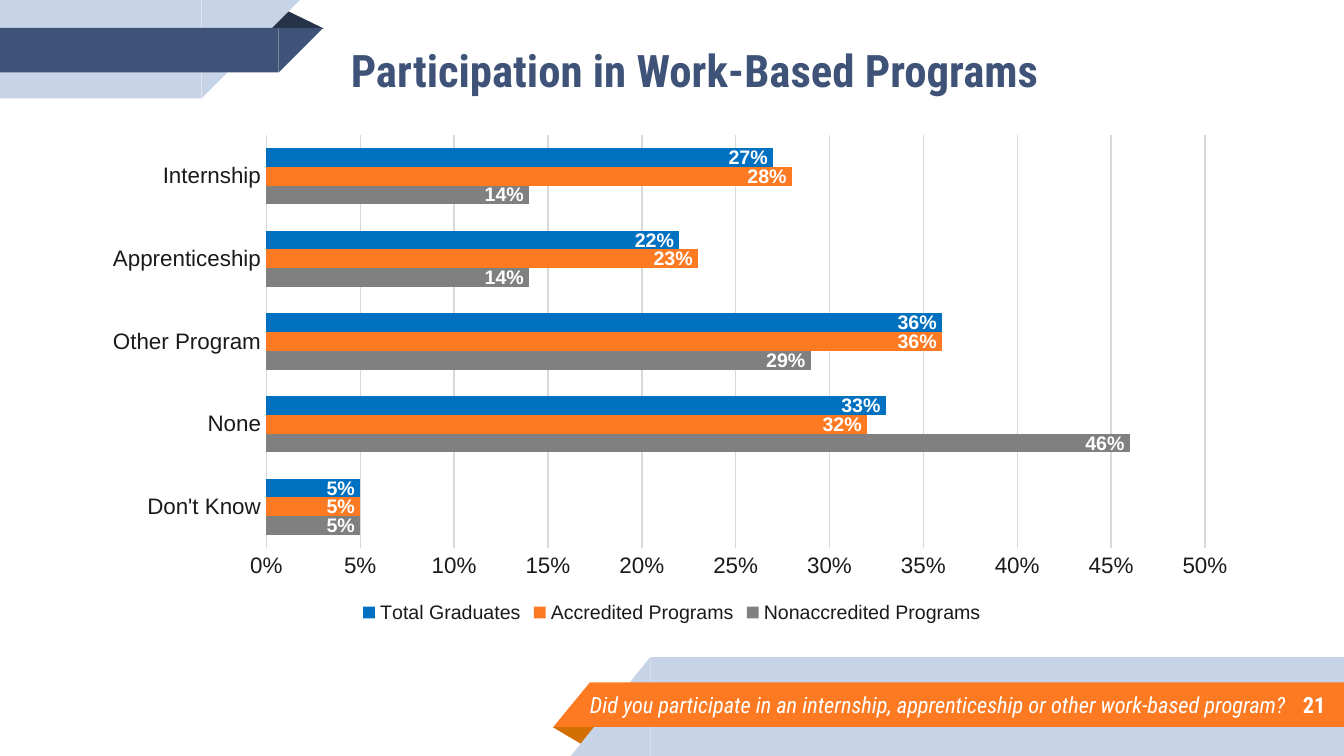
from dataclasses import dataclass

from lxml import etree
from pptx import Presentation
from pptx.chart.data import CategoryChartData
from pptx.dml.color import RGBColor
from pptx.enum.chart import XL_CHART_TYPE, XL_LABEL_POSITION, XL_LEGEND_POSITION, XL_TICK_MARK
from pptx.enum.shapes import MSO_SHAPE
from pptx.enum.text import MSO_ANCHOR, PP_ALIGN
from pptx.oxml.ns import qn
from pptx.util import Cm, Pt

BAR_CLUSTERED = XL_CHART_TYPE.BAR_CLUSTERED
INSIDE_END = XL_LABEL_POSITION.INSIDE_END
LEGEND_BOTTOM = XL_LEGEND_POSITION.BOTTOM
NO_TICK = XL_TICK_MARK.NONE
RECT = MSO_SHAPE.RECTANGLE
TRIANGLE = MSO_SHAPE.ISOSCELES_TRIANGLE
RIGHT_TRIANGLE = MSO_SHAPE.RIGHT_TRIANGLE
MIDDLE = MSO_ANCHOR.MIDDLE
LEFT, RIGHT = PP_ALIGN.LEFT, PP_ALIGN.RIGHT

NAVY = RGBColor(0x3F, 0x53, 0x78)
DARK_NAVY = RGBColor(0x26, 0x32, 0x48)
PALE_BLUE = RGBColor(0xC7, 0xD3, 0xE6)
ORANGE = RGBColor(0xFD, 0x7A, 0x22)
DARK_ORANGE = RGBColor(0xD2, 0x6F, 0x00)
BLUE = RGBColor(0x00, 0x70, 0xC0)
GREY = RGBColor(0x80, 0x80, 0x80)
GRID = RGBColor(0xD9, 0xD9, 0xD9)
INK = RGBColor(0x1A, 0x1A, 0x1A)
BLACK = RGBColor(0, 0, 0)
WHITE = RGBColor(0xFF, 0xFF, 0xFF)

HEAD_FONT, CHART_FONT = "Roboto Condensed", "Arial"
SLIDE_W, SLIDE_H = 25.4, 14.29


@dataclass
class Fold:
    x: float
    y: float
    w: float
    h: float
    color: RGBColor
    rotation: int = 0


@dataclass
class Ribbon:
    """Band running in from a slide edge, with a slanted inner end."""
    y: float
    h: float
    length: float
    slant: float
    color: RGBColor
    from_right: bool = False


@dataclass
class Label:
    text: str
    x: float
    y: float
    w: float
    h: float
    size: float
    color: RGBColor
    bold: bool = False
    italic: bool = False
    align: PP_ALIGN = LEFT


@dataclass
class Series:
    name: str
    values: tuple[float, ...]
    color: RGBColor


DECOR = [
    Fold(10.44, 13.74, 0.89, 0.36, DARK_ORANGE, 180),
    Ribbon(12.42, 1.87, 13.11, 1.5, PALE_BLUE, True),
    Ribbon(12.9, 0.84, 14.25, 0.69, ORANGE, True),
    Fold(5.03, 0.18, 1.09, 0.36, DARK_NAVY),
    Ribbon(0, 1.86, 3.81, 1.86, PALE_BLUE),
    Ribbon(0.53, 0.84, 5.27, 0.84, NAVY),
]
LABELS = [
    Label("Did you participate in an internship, apprenticeship or other work-based program?",
          10.9, 12.88, 14.5, 0.89, 12, WHITE, italic=True),
    Label("21", 21.16, 12.88, 4.14, 0.89, 12, WHITE, bold=True, align=RIGHT),
    Label("Participation in Work-Based Programs", 6.38, 0.25, 16.46, 2.13, 24, NAVY, bold=True),
]
CATEGORIES = ["Don't Know", "None", "Other Program", "Apprenticeship", "Internship"]
SERIES = [
    Series("Nonaccredited Programs", (0.05, 0.46, 0.29, 0.14, 0.14), GREY),
    Series("Accredited Programs", (0.05, 0.32, 0.36, 0.23, 0.28), ORANGE),
    Series("Total Graduates", (0.05, 0.33, 0.36, 0.22, 0.27), BLUE),
]
PLOT_LAYOUT = {"x": 0.15, "y": 0.02, "w": 0.81, "h": 0.82}


def add_solid(s, kind: MSO_SHAPE, x: float, y: float, w: float, h: float, color: RGBColor):
    sp = s.shapes.add_shape(kind, Cm(x), Cm(y), Cm(w), Cm(h))
    sp.shadow.inherit = False
    sp.fill.solid()
    sp.fill.fore_color.rgb = color
    sp.line.fill.background()
    return sp


def draw_fold(s, fold: Fold) -> None:
    sp = add_solid(s, TRIANGLE, fold.x, fold.y, fold.w, fold.h, fold.color)
    sp.adjustments[0] = 0.32
    sp.rotation = fold.rotation


def draw_ribbon(s, b: Ribbon) -> None:
    x = SLIDE_W - b.length if b.from_right else 0
    end_x = x - b.slant if b.from_right else b.length
    add_solid(s, RECT, x, b.y, b.length, b.h, b.color)
    end = add_solid(s, RIGHT_TRIANGLE, end_x, b.y, b.slant, b.h, b.color)
    end.element.spPr.find(qn("a:xfrm")).set("flipH" if b.from_right else "flipV", "1")


def style_font(font, name: str, size: float, color: RGBColor, bold=False, italic=False) -> None:
    font.name, font.size = name, Pt(size)
    font.bold, font.italic = bold, italic
    font.color.rgb = color


def draw_label(s, label: Label) -> None:
    sp = s.shapes.add_textbox(Cm(label.x), Cm(label.y), Cm(label.w), Cm(label.h))
    tf = sp.text_frame
    tf.word_wrap = True
    tf.vertical_anchor = MIDDLE
    tf.margin_left = tf.margin_right = tf.margin_top = tf.margin_bottom = Cm(0.25)
    p = tf.paragraphs[0]
    p.alignment = label.align
    r = p.add_run()
    r.text = label.text
    style_font(r.font, HEAD_FONT, label.size, label.color, label.bold, label.italic)


def fix_plot_area(chart) -> None:
    area = chart.element.find(".//" + qn("c:plotArea"))
    for old in area.findall(qn("c:layout")):
        area.remove(old)
    layout = etree.Element(qn("c:layout"))
    area.insert(0, layout)
    manual = etree.SubElement(layout, qn("c:manualLayout"))
    modes = {"layoutTarget": "inner", "xMode": "edge", "yMode": "edge"}
    for tag, value in (modes | PLOT_LAYOUT).items():
        etree.SubElement(manual, qn(f"c:{tag}")).set("val", str(value))


def draw_chart(s) -> None:
    data = CategoryChartData(number_format="0%")
    data.categories = CATEGORIES
    for series in SERIES:
        data.add_series(series.name, series.values)
    chart = s.shapes.add_chart(BAR_CLUSTERED, Cm(1.75), Cm(2.36), Cm(21.9), Cm(9.53), data).chart
    chart.has_title = False
    style_font(chart.font, CHART_FONT, 10, BLACK)
    fix_plot_area(chart)

    # Bars and their labels
    plot = chart.plots[0]
    plot.gap_width, plot.overlap = 140, 0
    plot.vary_by_categories = False
    for bars, series in zip(plot.series, SERIES):
        bars.format.fill.solid()
        bars.format.fill.fore_color.rgb = series.color
        labels = bars.data_labels
        labels.show_value = True
        labels.position = INSIDE_END
        labels.number_format, labels.number_format_is_linked = "0%", False
        style_font(labels.font, CHART_FONT, 10.5, WHITE, bold=True)

    # Axes
    cat, val = chart.category_axis, chart.value_axis
    for axis in (cat, val):
        axis.major_tick_mark = axis.minor_tick_mark = NO_TICK
        style_font(axis.tick_labels.font, CHART_FONT, 12, INK)
    val.minimum_scale, val.maximum_scale, val.major_unit = 0, 0.5, 0.05
    val.tick_labels.number_format, val.tick_labels.number_format_is_linked = "0%", False
    val.has_major_gridlines = True
    val.format.line.fill.background()
    for line in (cat.format.line, val.major_gridlines.format.line):
        line.color.rgb = GRID
        line.width = Pt(0.75)

    # Legend
    chart.has_legend = True
    chart.legend.position = LEGEND_BOTTOM
    chart.legend.include_in_layout = False
    style_font(chart.legend.font, CHART_FONT, 10.5, INK)


def main() -> None:
    prs = Presentation()
    prs.slide_width, prs.slide_height = Cm(SLIDE_W), Cm(SLIDE_H)
    s = prs.slides.add_slide(prs.slide_layouts[6])
    for item in DECOR:
        draw = draw_fold if isinstance(item, Fold) else draw_ribbon
        draw(s, item)
    for label in LABELS:
        draw_label(s, label)
    draw_chart(s)
    prs.save("out.pptx")


if __name__ == "__main__":
    main()
